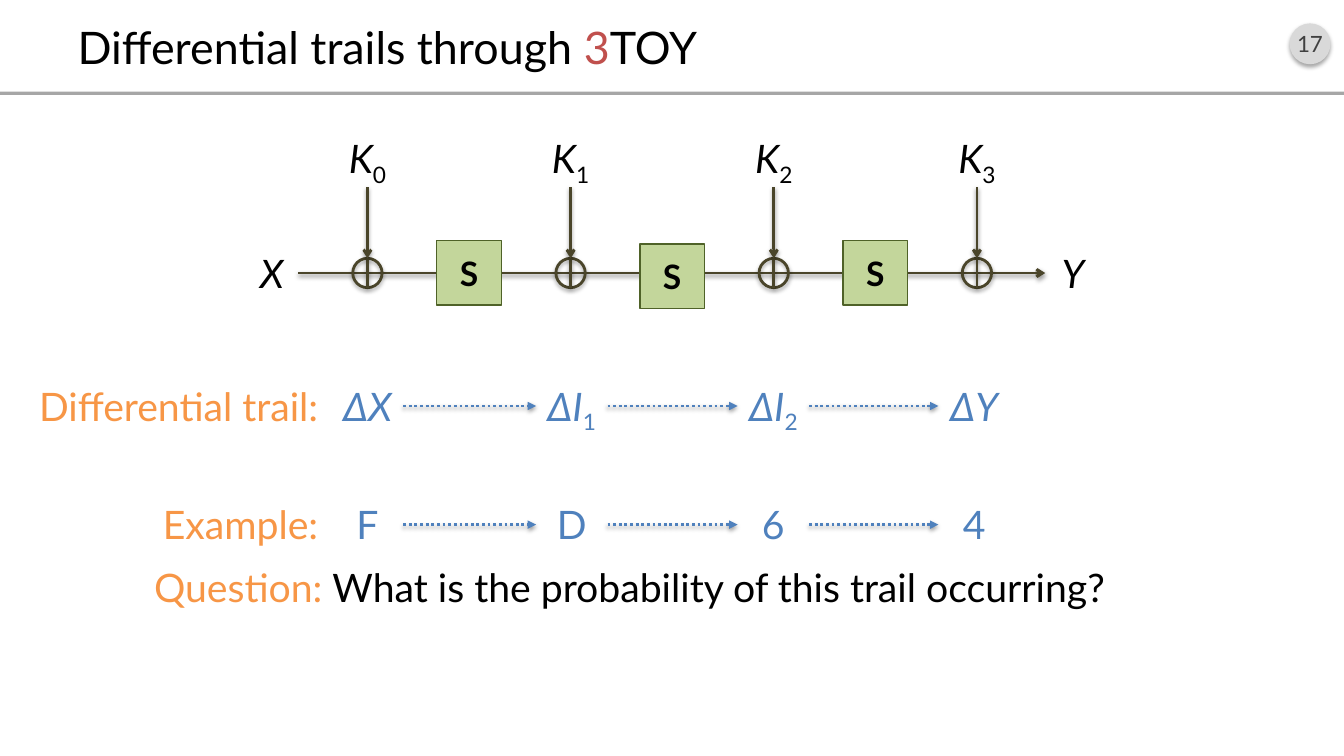
import lxml.etree
import pptx
import pptx.dml.color
import pptx.enum.dml
import pptx.enum.shapes
import pptx.enum.text
import pptx.oxml
import pptx.oxml.ns
import pptx.util

Cm = pptx.util.Cm
Pt = pptx.util.Pt
SHAPE = pptx.enum.shapes.MSO_SHAPE
ALIGN = pptx.enum.text.PP_ALIGN
MIDDLE = pptx.enum.text.MSO_ANCHOR.MIDDLE
qn = pptx.oxml.ns.qn

COLORS = {
    "text": "000000", "red": "C0504D", "orange": "F79646", "blue": "4F81BD",
    "wire": "4A452A", "box": "C3D69B", "box_edge": "4F6228",
    "badge": "D9D9D9", "badge_text": "404040", "rule": "A6A6A6",
}


class CipherSlide:
    """Draws styled text, shapes and arrows on one slide, in centimetres."""

    font = "Lato"
    size = 28

    def __init__(self, prs):
        self.s = prs.slides.add_slide(prs.slide_layouts[5])

    def color(self, name):
        return pptx.dml.color.RGBColor.from_string(COLORS[name])

    def fill_text(self, tf, runs, size, align, color, italic=False, bold=False):
        p = tf.paragraphs[0]
        p.alignment = align
        p.font.name = self.font
        p.font.size = Pt(size)
        p.font.italic = italic
        p.font.bold = bold
        if len(runs) == 1:
            p.font.color.rgb = self.color(color)
        for text, *own_color in runs:
            r = p.add_run()
            r.text = text
            if len(runs) > 1:
                r.font.color.rgb = self.color(own_color[0] if own_color else color)
        return p

    def title(self, runs, x, y, w, h):
        sp = self.s.shapes.title
        sp.left, sp.top, sp.width, sp.height = Cm(x), Cm(y), Cm(w), Cm(h)
        sp.text_frame.vertical_anchor = MIDDLE
        self.fill_text(sp.text_frame, runs, 32, ALIGN.LEFT, "text")

    def text(self, runs, x, y, w, color="text", align=ALIGN.CENTER, italic=False, sub=""):
        sp = self.s.shapes.add_textbox(Cm(x), Cm(y), Cm(w), Cm(1.45))
        tf = sp.text_frame
        tf.word_wrap = True
        tf.margin_left = tf.margin_right = 0
        p = self.fill_text(tf, runs + ([(sub,)] if sub else []), self.size, align, color, italic)
        if sub:
            r = p.runs[-1]
            r.font.italic = False
            r.font._element.set("baseline", "-25000")

    def shadow(self, parent, opacity, distance):
        shadow = lxml.etree.SubElement(
            parent, qn("a:outerShdw"), blurRad=str(Pt(3.1)), dist=str(Pt(distance)),
            dir="5400000", rotWithShape="0")
        black = lxml.etree.SubElement(shadow, qn("a:srgbClr"), val=COLORS["text"])
        lxml.etree.SubElement(black, qn("a:alpha"), val=str(opacity * 1000))

    def shape(self, kind, x, y, w, h, fill=None, line=None, line_pt=1, shadow=False):
        sp = self.s.shapes.add_shape(kind, Cm(x), Cm(y), Cm(w), Cm(h))
        if fill:
            sp.fill.solid()
            sp.fill.fore_color.rgb = self.color(fill)
        else:
            sp.fill.background()
        if line:
            sp.line.color.rgb = self.color(line)
            sp.line.width = Pt(line_pt)
        else:
            sp.line.fill.background()
        sp.shadow.inherit = False
        if shadow:
            self.shadow(sp._element.spPr.find(qn("a:effectLst")), 35, 1.8)
        return sp

    def label(self, sp, text, size, color, bold=False):
        tf = sp.text_frame
        tf.margin_left = tf.margin_right = tf.margin_top = tf.margin_bottom = 0
        tf.vertical_anchor = MIDDLE
        self.fill_text(tf, [(text,)], size, ALIGN.CENTER, color, bold=bold)

    def line(self, x1, y1, x2, y2, color="wire", head=None, dotted=False):
        c = self.s.shapes.add_connector(
            pptx.enum.shapes.MSO_CONNECTOR.STRAIGHT, Cm(x1), Cm(y1), Cm(x2), Cm(y2))
        c.line.color.rgb = self.color(color)
        c.line.width = Pt(2)
        if dotted:
            c.line.dash_style = pptx.enum.dml.MSO_LINE.ROUND_DOT
        spPr = c._element.spPr
        if head:
            lxml.etree.SubElement(spPr.find(qn("a:ln")), qn("a:tailEnd"), type=head)
        self.shadow(lxml.etree.SubElement(spPr, qn("a:effectLst")), 38, 1.6)

    def key_addition(self, x, y, index):
        radius = 0.37
        self.text([("K",)], x - 0.98, 3.27, 1.96, italic=True, sub=str(index))
        self.shape(SHAPE.OVAL, x - radius, y - radius, 2 * radius, 2 * radius,
                   line="wire", line_pt=2, shadow=True)
        self.line(x, y - radius, x, y + radius)
        self.line(x, 4.72, x, y - radius, head="arrow")

    def sbox(self, x, y):
        side = 1.63
        sp = self.shape(SHAPE.RECTANGLE, x - side / 2, y, side, side, "box", "box_edge")
        self.label(sp, "S", 24, "text", bold=True)

    def trail(self, name, states, y, italic=False):
        width = 1.8
        lefts = [8.36, 13.51, 18.59, 23.65]
        self.text([(name,)], 0.48, y, 7.54, "orange", ALIGN.RIGHT)
        for x, (state, sub) in zip(lefts, states):
            self.text([(state,)], x, y, width, "blue", italic=italic, sub=sub)
        for x, following in zip(lefts, lefts[1:]):
            self.line(x + width, y + 0.73, following, y + 0.73, "blue", "triangle", True)


def main():
    prs = pptx.Presentation()
    prs.slide_width, prs.slide_height = Cm(33.87), Cm(19.05)
    s = CipherSlide(prs)

    badge = s.shape(SHAPE.OVAL, 32.5, 0.59, 1.03, 1.03, "badge", shadow=True)
    s.label(badge, "17", 16, "badge_text")
    s.shape(SHAPE.RECTANGLE, 0, 2.31, 33.87, 0.08, "rule")
    s.title([("Differential trails through ",), ("3", "red"), ("TOY",)], 1.7, 0.41, 30.48, 1.52)

    first, pitch, wire = 9.26, 5.12, 6.88
    s.text([("X",)], 6.15, 6.15, 1.4, italic=True)
    s.text([("Y",)], 26.34, 6.15, 1.4, italic=True)
    s.line(7.52, wire, 26.34, wire, head="arrow")
    for i in range(4):
        s.key_addition(first + i * pitch, wire, i)
    for i, top in enumerate([6.06, 6.15, 6.06]):
        s.sbox(first + (i + 0.5) * pitch, top)

    s.trail("Differential trail:", [("ΔX", ""), ("ΔI", "1"), ("ΔI", "2"), ("ΔY", "")], 9.5, True)
    s.trail("Example:", [(state, "") for state in "FD64"], 12.49)
    s.text([("Question: ", "orange"), ("What is the probability of this trail occurring?",)],
           3.3, 14.07, 24.54, align=ALIGN.RIGHT)
    prs.save("out.pptx")


if __name__ == "__main__":
    main()
